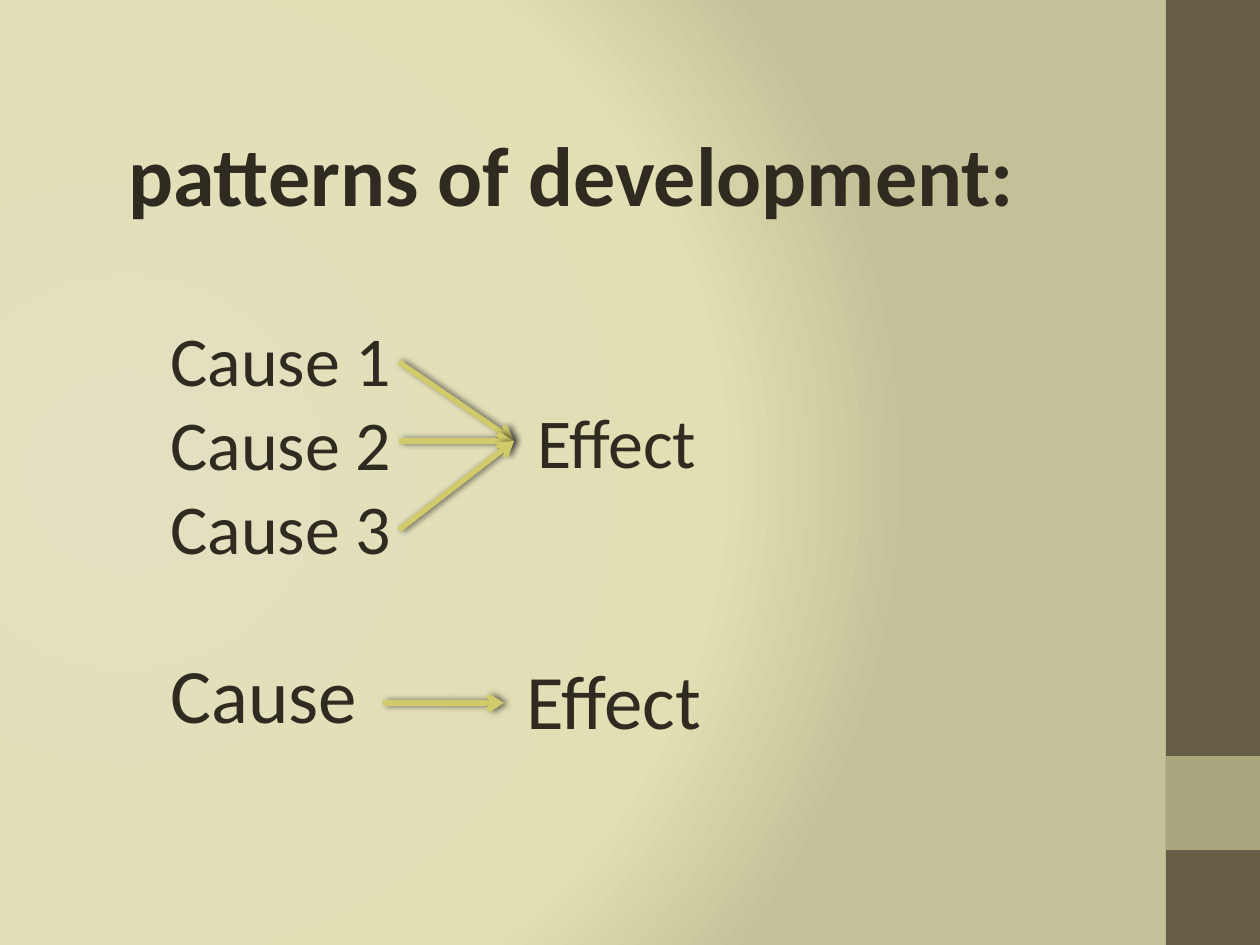
from lxml.etree import SubElement
from pptx import Presentation
from pptx.dml.color import RGBColor
from pptx.enum.shapes import MSO_CONNECTOR as CONN, MSO_SHAPE as SHAPE
from pptx.enum.text import MSO_AUTO_SIZE as FIT
from pptx.oxml.ns import qn
from pptx.util import Emu, Pt

INK = RGBColor(0x2F, 0x2B, 0x20)
BAND = RGBColor(0x67, 0x5E, 0x47)
ACCENT = RGBColor(0xA9, 0xA5, 0x7C)
ARROW = RGBColor(0xD2, 0xCB, 0x6C)
SHADOW = RGBColor(0, 0, 0)
BG_STOPS = [
    (0, RGBColor(0xE2, 0xE0, 0xC0)),
    (75, RGBColor(0xE2, 0xDF, 0xB4)),
    (100, RGBColor(0xC4, 0xC1, 0x98)),
]
FONT = "Calibri"
PX_PER_INCH = 126


def px(n):
    return Emu(round(n * 914400 / PX_PER_INCH))


def sub(parent, tag, **attrs):
    return SubElement(parent, qn(tag), {k: str(v) for k, v in attrs.items()})


def write(tf, text, size, bold=False, color=INK):
    for i, line in enumerate(text.split("\n")):
        p = tf.paragraphs[0] if i == 0 else tf.add_paragraph()
        r = p.add_run()
        r.text = line
        r.font.name = FONT
        r.font.size = Pt(size)
        r.font.bold = bold
        r.font.color.rgb = color


class Deck:
    def __init__(self, width, height):
        self.prs = Presentation()
        self.prs.slide_width, self.prs.slide_height = px(width), px(height)
        self.s = self.prs.slides.add_slide(self.prs.slide_layouts[6])

    def background(self, stops):
        self.s.background.fill.gradient()
        grad = self.s.element.find(".//" + qn("a:gradFill"))
        for child in list(grad):
            grad.remove(child)
        gs_lst = sub(grad, "a:gsLst")
        for pos, color in stops:
            gs = sub(gs_lst, "a:gs", pos=pos * 1000)
            sub(gs, "a:srgbClr", val=color)
        circle = sub(grad, "a:path", path="circle")
        sub(circle, "a:fillToRect", l=20000, t=50000, r=100000, b=50000)

    def rect(self, x, y, w, h, color):
        sp = self.s.shapes.add_shape(SHAPE.RECTANGLE, px(x), px(y), px(w), px(h))
        sp.shadow.inherit = False
        sp.fill.solid()
        sp.fill.fore_color.rgb = color
        sp.line.fill.background()

    def text(self, x, y, w, h, text, **fmt):
        tf = self.s.shapes.add_textbox(px(x), px(y), px(w), px(h)).text_frame
        tf.word_wrap = True
        tf.auto_size = FIT.SHAPE_TO_FIT_TEXT
        write(tf, text, **fmt)

    def arrow(self, x1, y1, x2, y2):
        cn = self.s.shapes.add_connector(CONN.STRAIGHT, px(x1), px(y1), px(x2), px(y2))
        cn.line.color.rgb = ARROW
        cn.line.width = Pt(3)
        sp_pr = cn.element.spPr
        sub(sp_pr.find(qn("a:ln")), "a:tailEnd", type="arrow")
        shadow = sub(sub(sp_pr, "a:effectLst"), "a:outerShdw", blurRad=Pt(4),
                     dist=Pt(2), dir=0, algn="bl", rotWithShape=0)
        sub(sub(shadow, "a:srgbClr", val=SHADOW), "a:alpha", val=60000)


def main():
    deck = Deck(1260, 945)
    deck.background(BG_STOPS)
    deck.rect(1166, 0, 94, 945, BAND)
    deck.rect(1166, 756, 94, 94, ACCENT)
    deck.text(116, 116, 1061, 115, "patterns of development:", size=48, bold=True)

    deck.text(158, 310, 273, 267, "Cause 1\nCause 2\nCause 3", size=40)
    for y in (362, 441, 530):
        deck.arrow(399, y, 514, 441)
    deck.text(525, 392, 220, 97, "Effect", size=40)

    deck.text(158, 640, 225, 106, "Cause", size=44)
    deck.arrow(383, 703, 504, 703)
    deck.text(514, 646, 220, 106, "Effect", size=44)
    deck.prs.save("out.pptx")


if __name__ == "__main__":
    main()
